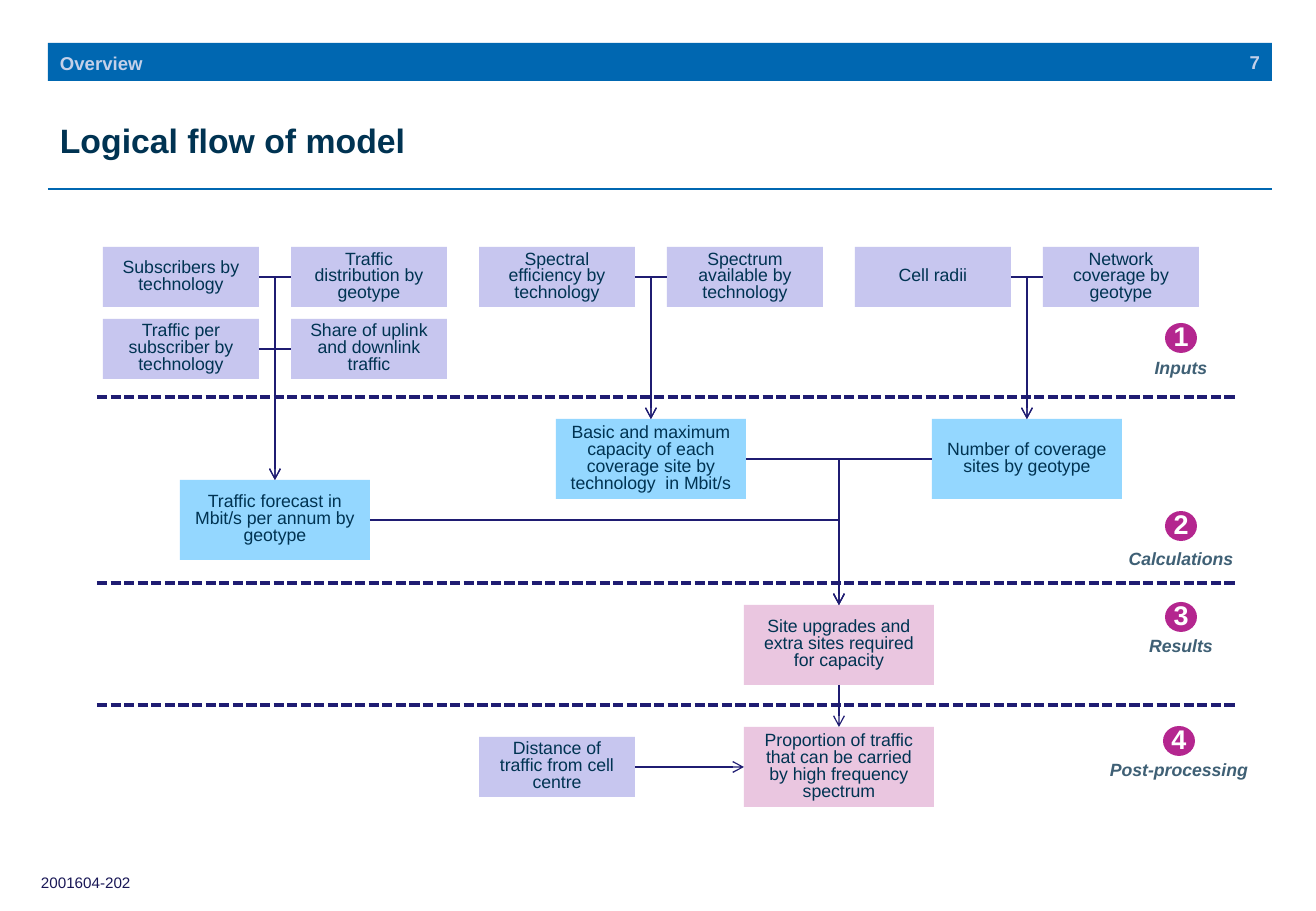
from lxml import etree
from pptx import Presentation, util as u
from pptx.dml.color import RGBColor
from pptx.enum import dml, shapes, text
from pptx.oxml.ns import qn

PX = 7526  # EMU per px
WIDTH, HEIGHT = 1316, 911

BLUE = RGBColor(0x00, 0x67, 0xB1)
PALE_BLUE = RGBColor(0xC4, 0xD0, 0xE9)
INK = RGBColor(0x00, 0x33, 0x52)
NAVY = RGBColor(0x1F, 0x1C, 0x72)
FOOTER_INK = RGBColor(0x19, 0x17, 0x56)
SLATE = RGBColor(0x3F, 0x60, 0x75)
MAGENTA = RGBColor(0xB4, 0x26, 0x8F)
WHITE = RGBColor(0xFF, 0xFF, 0xFF)
LILAC = RGBColor(0xC7, 0xC6, 0xEF)
SKY = RGBColor(0x94, 0xD7, 0xFF)
PINK = RGBColor(0xEA, 0xC6, 0xE0)

# Box kinds: width, height, fill
INPUT, CALC, RESULT = (156, 60, LILAC), (190, 80, SKY), (190, 80, PINK)
FIRST_CENTRE, COLUMN_STEP = 181, 188

# key: kind, column (halves lie between two columns), top, wording
BOXES = {
    "subscribers": (INPUT, 0, 247, "Subscribers by technology"),
    "distribution": (INPUT, 1, 247, "Traffic distribution by geotype"),
    "efficiency": (INPUT, 2, 247, "Spectral efficiency by technology"),
    "spectrum": (INPUT, 3, 247, "Spectrum available by technology"),
    "radii": (INPUT, 4, 247, "Cell radii"),
    "network": (INPUT, 5, 247, "Network coverage by geotype"),
    "per_user": (INPUT, 0, 319, "Traffic per subscriber by technology"),
    "share": (INPUT, 1, 319, "Share of uplink and downlink traffic"),
    "capacity": (CALC, 2.5, 419, "Basic and maximum capacity of each coverage site by technology  in Mbit/s"),
    "sites": (CALC, 4.5, 419, "Number of coverage sites by geotype"),
    "forecast": (CALC, 0.5, 480, "Traffic forecast in Mbit/s per annum by geotype"),
    "upgrades": (RESULT, 3.5, 605, "Site upgrades and extra sites required for capacity"),
    "proportion": (RESULT, 3.5, 727, "Proportion of traffic that can be carried by high frequency spectrum"),
    "distance": (INPUT, 2, 737, "Distance of traffic from cell centre"),
}

# Joins: from, side, to, side, arrowhead
TOP, LEFT, BOTTOM, RIGHT = range(4)
ELBOWS = [
    ("subscribers", RIGHT, "forecast"), ("distribution", LEFT, "forecast"),
    ("efficiency", RIGHT, "capacity"), ("spectrum", LEFT, "capacity"),
    ("radii", RIGHT, "sites"), ("network", LEFT, "sites"),
    ("capacity", RIGHT, "upgrades"), ("sites", LEFT, "upgrades"),
    ("forecast", RIGHT, "upgrades"),
]
STRAIGHTS = [
    ("per_user", RIGHT, "share", LEFT, False),
    ("distance", RIGHT, "proportion", LEFT, True),
    ("upgrades", BOTTOM, "proportion", TOP, True),
]

# Stages: name, badge centre x, badge top, label top
STAGES = [("Inputs", 1181, 323, 361), ("Calculations", 1181, 511, 552),
          ("Results", 1181, 602, 639), ("Post-processing", 1179, 726, 763)]
DIVIDERS = [397, 583, 705]

prs = Presentation()
prs.slide_width, prs.slide_height = WIDTH * PX, HEIGHT * PX
slide = prs.slides.add_slide(prs.slide_layouts[6])


def write(sp, words, size, colour, align=text.PP_ALIGN.LEFT, spacing=None,
          bold=False, italic=False, anchor=text.MSO_ANCHOR.MIDDLE):
    tf = sp.text_frame
    tf.word_wrap = True
    tf.vertical_anchor = anchor
    p = tf.paragraphs[0]
    p.alignment = align
    if spacing:
        p.line_spacing = u.Pt(spacing)
    r = p.add_run()
    r.text = words
    r.font.name, r.font.size = "Arial", u.Pt(size)
    r.font.bold, r.font.italic = bold, italic
    r.font.color.rgb = colour


def add_text(x, y, w, h, words, size, colour, inset=True, **style):
    sp = slide.shapes.add_textbox(x * PX, y * PX, w * PX, h * PX)
    if not inset:
        tf = sp.text_frame
        tf.margin_left = tf.margin_right = tf.margin_top = tf.margin_bottom = 0
    write(sp, words, size, colour, **style)


def add_filled(kind, x, y, w, h, fill):
    sp = slide.shapes.add_shape(kind, x * PX, y * PX, w * PX, h * PX)
    sp.shadow.inherit = False
    sp.fill.solid()
    sp.fill.fore_color.rgb = fill
    sp.line.fill.background()
    return sp


def add_line(kind, x1, y1, x2, y2, colour=NAVY, width=0.75, dash=None, arrow=False):
    cxn = slide.shapes.add_connector(kind, x1 * PX, y1 * PX, x2 * PX, y2 * PX)
    cxn.line.color.rgb = colour
    cxn.line.width = u.Pt(width)
    if dash:
        cxn.line.dash_style = dash
    sp_pr = cxn._element.spPr
    if arrow:
        etree.SubElement(sp_pr.find(qn("a:ln")), qn("a:tailEnd"), type="arrow")
    etree.SubElement(sp_pr, qn("a:effectLst"))
    return cxn


def join(kind, start, start_side, end, end_side, arrow):
    cxn = add_line(kind, 0, 0, 0, 0, arrow=arrow)
    cxn.begin_connect(boxes[start], start_side)
    cxn.end_connect(boxes[end], end_side)
    return cxn


RECT, OVAL = shapes.MSO_SHAPE.RECTANGLE, shapes.MSO_SHAPE.OVAL
STRAIGHT, ELBOW = shapes.MSO_CONNECTOR.STRAIGHT, shapes.MSO_CONNECTOR.ELBOW
CENTRE, TO_RIGHT = text.PP_ALIGN.CENTER, text.PP_ALIGN.RIGHT

# Header, title and footer
add_filled(RECT, 48, 43, 1224, 38, BLUE)
add_line(STRAIGHT, 48, 189, 1272, 189, BLUE, 1)
add_text(48, 44, 430, 38, "Overview", 11, PALE_BLUE, bold=True)
add_text(1168, 43, 104, 38, "7", 11, PALE_BLUE, align=TO_RIGHT, bold=True)
add_text(48, 89, 1224, 101, "Logical flow of model", 20, INK, spacing=25, bold=True)
add_text(29, 867, 140, 30, "2001604-202", 9, FOOTER_INK, anchor=text.MSO_ANCHOR.TOP)

# Stage dividers
for y in DIVIDERS:
    add_line(STRAIGHT, 97, y, 1237, y, width=2, dash=dml.MSO_LINE.SQUARE_DOT)

# Flow boxes
boxes = {}
for key, ((w, h, fill), column, top, words) in BOXES.items():
    left = int(FIRST_CENTRE + COLUMN_STEP * column - w / 2)
    boxes[key] = add_filled(RECT, left, top, w, h, fill)
    write(boxes[key], words, 10.5, INK, align=CENTRE, spacing=10)

# Arrows: one bend down into the top of the next box, or straight
for start, side, end in ELBOWS:
    cxn = join(ELBOW, start, side, end, TOP, True)
    cxn._element.spPr.find(qn("a:prstGeom")).set("prst", "bentConnector2")
for start, side, end, end_side, arrow in STRAIGHTS:
    join(STRAIGHT, start, side, end, end_side, arrow)

# Numbered stage badges
for number, (name, cx, top, label_top) in enumerate(STAGES, 1):
    add_filled(OVAL, cx - 16, top, 32, 30, MAGENTA)
    stage_style = dict(inset=False, align=CENTRE, spacing=10, bold=True,
                       anchor=text.MSO_ANCHOR.TOP)
    add_text(cx - 16, top + 12, 32, 17, str(number), 16, WHITE, **stage_style)
    add_text(cx - 80, label_top, 160, 17, name, 10.5, SLATE, italic=True, **stage_style)

prs.save("out.pptx")
